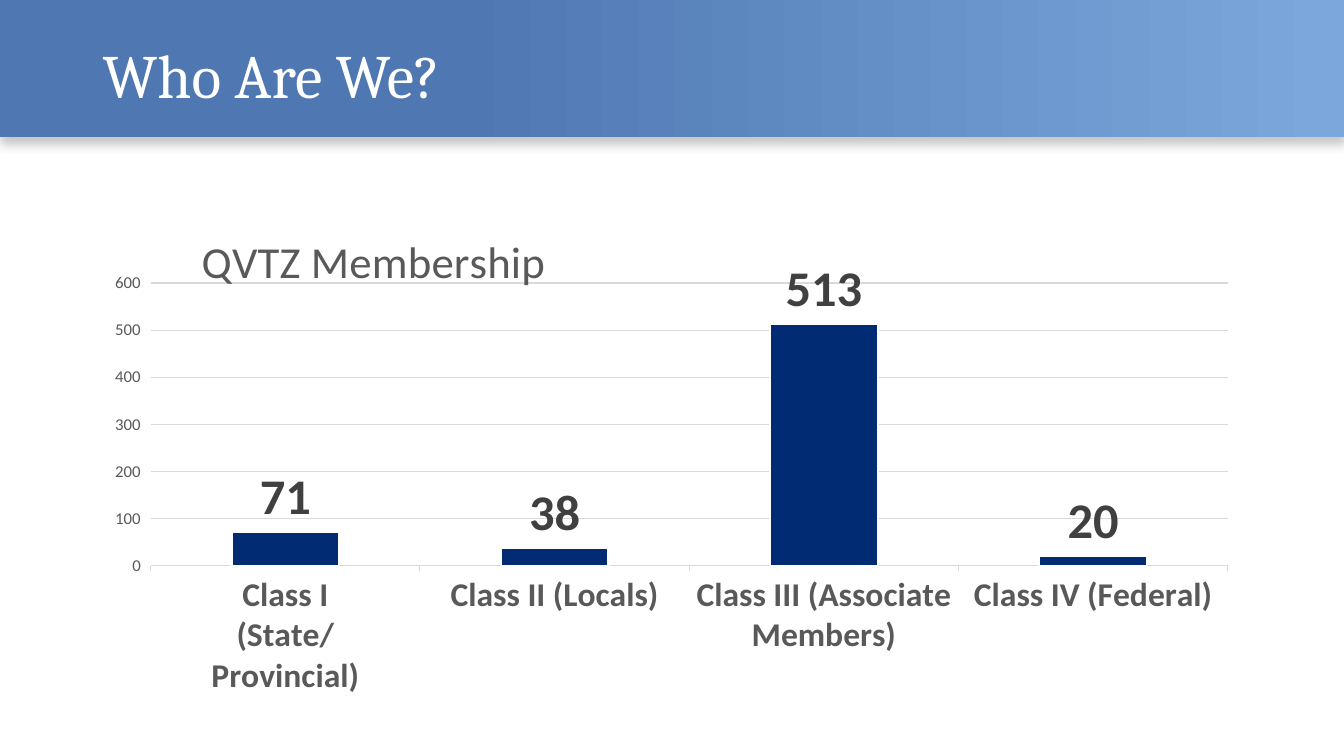
import dataclasses
from typing import Optional

import lxml.etree
import pptx
import pptx.chart.data
import pptx.dml.color
import pptx.enum.chart
import pptx.enum.shapes
import pptx.oxml
import pptx.oxml.ns
import pptx.slide
import pptx.text.text
import pptx.util

RGBColor = pptx.dml.color.RGBColor
Inches = pptx.util.Inches
Pt = pptx.util.Pt
qn = pptx.oxml.ns.qn

WHITE = RGBColor(0xFF, 0xFF, 0xFF)
SKY = RGBColor(0x7B, 0xA7, 0xDD)
STEEL = RGBColor(0x4F, 0x77, 0xB1)
NAVY = RGBColor(0x01, 0x2B, 0x73)
BLACK = RGBColor(0x00, 0x00, 0x00)
DARK = RGBColor(0x40, 0x40, 0x40)
GRAY = RGBColor(0x59, 0x59, 0x59)
RULE = RGBColor(0xD9, 0xD9, 0xD9)

SHADOW = (
    f'<a:effectLst {pptx.oxml.ns.nsdecls("a")}>'
    '<a:outerShdw blurRad="101600" dist="63500" dir="5400000" algn="t" rotWithShape="0">'
    '<a:srgbClr val="000000"><a:alpha val="23000"/></a:srgbClr>'
    '</a:outerShdw></a:effectLst>'
)


@dataclasses.dataclass
class Band:
    top: float
    height: float
    stops: tuple[tuple[float, RGBColor], ...] = ()
    shadow: bool = False


BANDS = [
    Band(1.11, 0.23, shadow=True),
    Band(0, 1.36, stops=((0.01, SKY), (0.66, STEEL))),
]
MEMBERS = {
    "Class I (State/Provincial)": 71,
    "Class II (Locals)": 38,
    "Class III (Associate Members)": 513,
    "Class IV (Federal)": 20,
}


def add_band(s: pptx.slide.Slide, band: Band) -> None:
    sp = s.shapes.add_shape(
        pptx.enum.shapes.MSO_SHAPE.RECTANGLE,
        0, Inches(band.top), Inches(13.33), Inches(band.height),
    )
    sp.line.fill.background()
    if band.stops:
        sp.fill.gradient()
        sp.fill.gradient_angle = 180
        for stop, (position, color) in zip(sp.fill.gradient_stops, band.stops):
            stop.position = position
            stop.color.rgb = color
    else:
        sp.fill.solid()
        sp.fill.fore_color.rgb = WHITE
    if band.shadow:
        sp._element.spPr.append(pptx.oxml.parse_xml(SHADOW))
    else:
        sp.shadow.inherit = False


def style_font(font: pptx.text.text.Font, size: float, color: RGBColor,
               bold: bool = False, name: str = "Calibri") -> None:
    font.name = name
    font.size = Pt(size)
    font.bold = bold
    font.color.rgb = color


def place(parent: lxml.etree._Element, x: float, y: float,
          w: Optional[float] = None, h: Optional[float] = None) -> None:
    for old in parent.findall(qn("c:layout")):
        parent.remove(old)
    layout = lxml.etree.Element(qn("c:layout"))
    manual = lxml.etree.SubElement(layout, qn("c:manualLayout"))
    settings = [("xMode", "edge"), ("yMode", "edge"), ("x", x), ("y", y)]
    if w is not None:
        settings = [("layoutTarget", "inner"), *settings, ("w", w), ("h", h)]
    for tag, val in settings:
        lxml.etree.SubElement(manual, qn(f"c:{tag}")).set("val", str(val))
    tx = parent.find(qn("c:tx"))
    parent.insert(0 if tx is None else 1, layout)


def add_title(s: pptx.slide.Slide, text: str) -> None:
    tf = s.shapes.add_textbox(
        Inches(0.92), Inches(0.4), Inches(10.25), Inches(0.95)
    ).text_frame
    tf.word_wrap = True
    p = tf.paragraphs[0]
    p.line_spacing = 0.9
    r = p.add_run()
    r.text = text
    style_font(r.font, 44, WHITE, name="Cambria")


def add_membership_chart(s: pptx.slide.Slide, name: str) -> None:
    data = pptx.chart.data.CategoryChartData()
    data.categories = list(MEMBERS)
    data.add_series(name, list(MEMBERS.values()))
    chart = s.shapes.add_chart(
        pptx.enum.chart.XL_CHART_TYPE.COLUMN_CLUSTERED,
        Inches(0.92), Inches(1.7), Inches(11.5), Inches(5.17), data,
    ).chart
    style_font(chart.font, 10, BLACK)
    chart.has_legend = False
    chart.has_title = True
    title = chart.chart_title
    title.include_in_layout = False
    r = title.text_frame.paragraphs[0].add_run()
    r.text = name
    style_font(r.font, 32, GRAY)
    place(title._element, 0.087, 0.1)
    place(chart._chartSpace.chart.plotArea, 0.05, 0.217, 0.929, 0.549)

    cat, val = chart.category_axis, chart.value_axis
    style_font(cat.tick_labels.font, 24, GRAY, bold=True)
    style_font(val.tick_labels.font, 12, GRAY)
    val.minimum_scale, val.maximum_scale, val.major_unit = 0, 600, 100
    val.format.line.fill.background()
    for line in (cat.format.line, val.major_gridlines.format.line):
        line.color.rgb = RULE
        line.width = Pt(0.75)

    plot = chart.plots[0]
    plot.gap_width = 150
    plot.vary_by_categories = False
    series = plot.series[0]
    series.format.fill.solid()
    series.format.fill.fore_color.rgb = NAVY
    series.format.line.color.rgb = WHITE
    series.format.line.width = Pt(1.5)
    labels = series.data_labels
    labels.show_value = True
    labels.position = pptx.enum.chart.XL_LABEL_POSITION.OUTSIDE_END
    style_font(labels.font, 36, DARK, bold=True)


def main() -> None:
    prs = pptx.Presentation()
    prs.slide_width, prs.slide_height = Inches(13.33), Inches(7.5)
    s = prs.slides.add_slide(prs.slide_layouts[6])
    for band in BANDS:
        add_band(s, band)
    add_title(s, "Who Are We?")
    add_membership_chart(s, "QVTZ Membership")
    prs.save("out.pptx")


if __name__ == "__main__":
    main()
